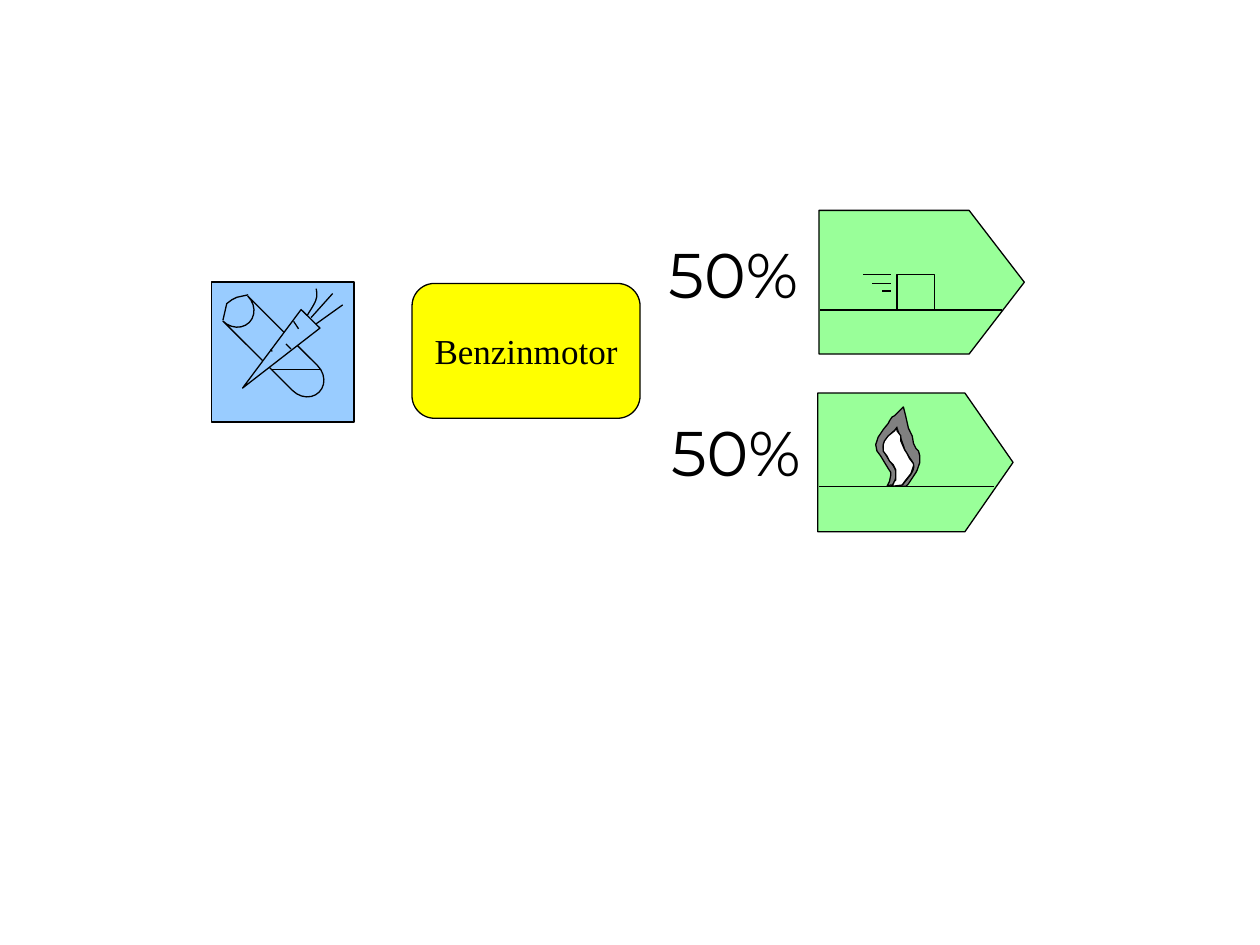
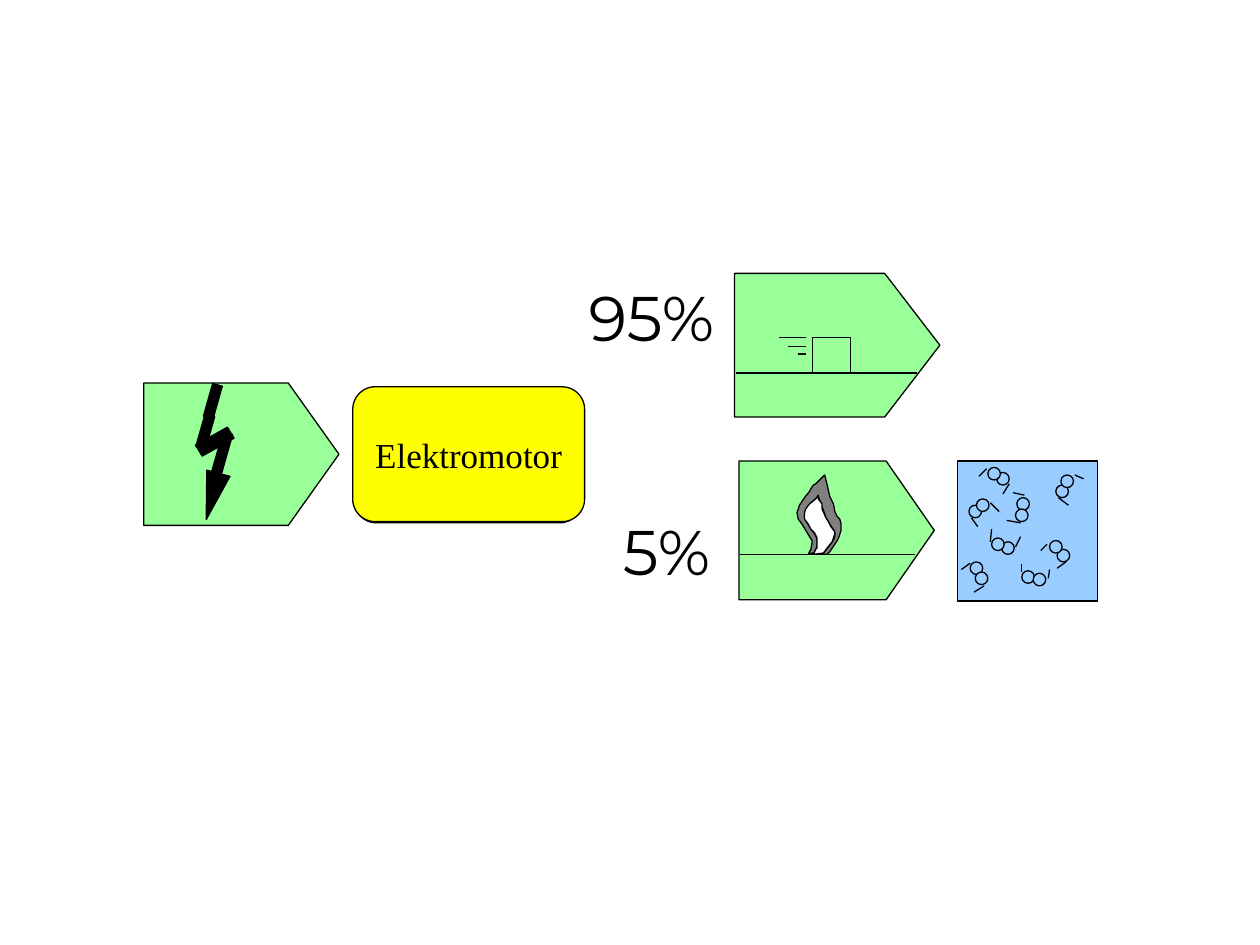
from dataclasses import dataclass
from typing import Optional, Union

from lxml.etree import SubElement
from pptx import Presentation
from pptx.dml.color import RGBColor as RGB
from pptx.enum.shapes import MSO_CONNECTOR as CONN, MSO_SHAPE as SHAPE
from pptx.enum.text import MSO_ANCHOR as ANCHOR, PP_ALIGN as ALIGN
from pptx.oxml.ns import qn
from pptx.util import Emu, Inches, Pt

# The slide is a grid of 1000 columns by 750 rows of square cells.
COLS, ROWS = 1000, 750
CELL = Inches(10) // COLS


@dataclass(frozen=True)
class Theme:
    ink: str = "000000"
    energy: str = "99FF99"
    matter: str = "99CCFF"
    engine: str = "FFFF00"
    smoke: str = "808080"
    glow: str = "FFFFFF"
    hairline: float = 0.75
    frame: float = 1
    label_font: str = "Times New Roman"
    label_size: int = 20
    share_font: str = "Montserrat"
    share_size: int = 36


T = Theme()


# Building blocks; positions are in cells from the symbol's top left corner
@dataclass(frozen=True)
class Block:
    kind: SHAPE
    x: float
    y: float
    w: float
    h: float
    fill: str
    rot: float = 0
    adj: Optional[float] = None
    line: float = T.hairline


@dataclass(frozen=True)
class Stroke:
    x1: float
    y1: float
    x2: float
    y2: float


@dataclass(frozen=True)
class Outline:
    points: tuple
    fill: Optional[str] = None
    closed: bool = False
    curved: bool = False


@dataclass(frozen=True)
class Share:
    text: str
    x: float
    y: float
    w: float = 110
    h: float = 84


Part = Union[Block, Stroke, Outline]


def cells(n: float) -> Emu:
    return Emu(round(n * CELL))


def smooth_points(points: tuple, steps: int = 8) -> list:
    """Sample a chain of cubic curves that share their end points."""
    result = [points[0]]
    for i in range(0, len(points) - 1, 3):
        a, b, c, d = points[i:i + 4]
        for k in range(1, steps + 1):
            t = k / steps
            u = 1 - t
            result.append(tuple(
                u**3 * a[n] + 3 * u * u * t * b[n] + 3 * u * t * t * c[n] + t**3 * d[n]
                for n in (0, 1)))
    return result


def paint(sp, fill: Optional[str], width: float) -> None:
    sp.shadow.inherit = False
    if fill:
        sp.fill.solid()
        sp.fill.fore_color.rgb = RGB.from_string(fill)
    else:
        sp.fill.background()
    sp.line.color.rgb = RGB.from_string(T.ink)
    sp.line.width = Pt(width)


def draw_block(shapes, b: Block, x: float = 0, y: float = 0):
    sp = shapes.add_shape(b.kind, cells(x + b.x), cells(y + b.y), cells(b.w), cells(b.h))
    sp.rotation = b.rot
    if b.adj is not None:
        sp.adjustments[0] = b.adj
    paint(sp, b.fill, b.line)
    return sp


def draw_stroke(shapes, s: Stroke, x: float, y: float) -> None:
    ln = shapes.add_connector(CONN.STRAIGHT, cells(x + s.x1), cells(y + s.y1),
                              cells(x + s.x2), cells(y + s.y2))
    ln.line.color.rgb = RGB.from_string(T.ink)
    ln.line.width = Pt(T.hairline)
    SubElement(ln.element.spPr, qn("a:effectLst"))


def draw_outline(shapes, o: Outline, x: float, y: float) -> None:
    points = smooth_points(o.points) if o.curved else o.points
    points = [(cells(x + px), cells(y + py)) for px, py in points]
    fb = shapes.build_freeform(*points[0])
    fb.add_line_segments(points[1:], close=o.closed)
    paint(fb.convert_to_shape(), o.fill, T.hairline)


DRAW = {Block: draw_block, Stroke: draw_stroke, Outline: draw_outline}


def draw_symbol(slide, parts: list[Part], x: float, y: float) -> None:
    group = slide.shapes.add_group_shape()
    for part in parts:
        DRAW[type(part)](group.shapes, part, x, y)


def add_text(sp, text: str, font: str, size: int):
    tf = sp.text_frame
    tf.word_wrap = False
    tf.margin_left = tf.margin_right = 0
    p = tf.paragraphs[0]
    p.alignment = ALIGN.CENTER
    r = p.add_run()
    r.text = text
    r.font.name, r.font.size = font, Pt(size)
    r.font.color.rgb = RGB.from_string(T.ink)
    return r


def draw_engine(slide, x: float, y: float, w: float, name: str = "") -> None:
    sp = draw_block(slide.shapes,
                    Block(SHAPE.ROUNDED_RECTANGLE, x, y, w, 107, T.engine, adj=0.167))
    if name:
        sp.text_frame.vertical_anchor = ANCHOR.MIDDLE
        add_text(sp, name, T.label_font, T.label_size)


def draw_share(slide, s: Share) -> None:
    tb = slide.shapes.add_textbox(cells(s.x), cells(s.y), cells(s.w), cells(s.h))
    r = add_text(tb, s.text, T.share_font, T.share_size)
    # Thin outline around the digits
    ln = SubElement(r.font._element, qn("a:ln"), w=str(Pt(T.hairline)))
    fill = SubElement(ln, qn("a:solidFill"))
    SubElement(fill, qn("a:srgbClr"), val=T.ink)
    r.font._element.insert(0, ln)


def plate(w: float, h: float, adj: float) -> Block:
    return Block(SHAPE.PENTAGON, 0, 0, w, h, T.energy, adj=adj)


def bar(x: float, y: float, h: float) -> Block:
    return Block(SHAPE.RECTANGLE, x, y, 8, h, T.ink, 15.8)


# Food: cucumber and carrot
FOOD = [
    Block(SHAPE.RECTANGLE, 0, 0, 113, 111, T.matter, line=T.frame),
    Block(SHAPE.FLOWCHART_STORED_DATA, 5, 40, 94, 28, T.matter, 224.9),
    Outline(((29, 10), (20, 12), (16, 14), (12, 17), (9, 30)), T.matter),
    Block(SHAPE.ISOSCELES_TRIANGLE, 41, 18, 21, 77, T.matter, 224.5),
    Outline(((76, 26), (79, 21), (82, 17), (83, 13), (84, 10), (83, 6), (83, 5)),
            T.matter, curved=True),
    Stroke(79, 28, 96, 9), Stroke(83, 33, 104, 18),
    Stroke(65, 31, 69, 37), Stroke(59, 49, 63, 53),
    Stroke(47, 53, 48, 55), Stroke(48, 69, 86, 69),
]

# Motion: a box sliding on the ground
MOTION = [
    plate(163, 114, 0.384),
    Stroke(1, 79, 145, 79),
    Block(SHAPE.RECTANGLE, 62, 51, 30, 28, T.energy),
    Stroke(57, 51, 35, 51), Stroke(57, 58, 42, 58), Stroke(50, 64, 57, 64),
]

# Heat: a flame on the ground
HEAT = [
    plate(155, 110, 0.347),
    Outline(((68, 11), (69, 15), (70, 19), (72, 28), (75, 34), (76, 40), (77, 42),
             (78, 44), (80, 46), (81, 50), (81, 55), (79, 61), (78, 63), (76, 66),
             (72, 72), (70, 74), (63, 74), (58, 73), (55, 74), (57, 70), (58, 65),
             (58, 63), (56, 60), (53, 55), (50, 50), (47, 46), (46, 41), (48, 35),
             (52, 29), (56, 24), (57, 22), (59, 19), (61, 18), (64, 15), (66, 13)),
            T.smoke, closed=True),
    Stroke(1, 74, 140, 74),
    Outline(((63, 28), (57, 33), (52, 38), (52, 43), (52, 49), (61, 57), (62, 62),
             (63, 67), (61, 70), (59, 74)), curved=True),
    Outline(((63, 28), (64, 31), (68, 41), (69, 45), (71, 49), (71, 48), (72, 50),
             (74, 53), (77, 56), (76, 60), (75, 64), (71, 68), (67, 73)), curved=True),
    Outline(((67, 73), (70, 69), (74, 64), (76, 58), (76, 56), (73, 52), (71, 48),
             (69, 45), (66, 38), (66, 34), (63, 30), (63, 27), (61, 30), (56, 34),
             (53, 38), (52, 41), (52, 46), (55, 50), (57, 54), (60, 57), (62, 61),
             (62, 63), (62, 66), (62, 69), (61, 70), (60, 72), (59, 74)),
            T.glow, closed=True),
]

# Electricity: a lightning bolt
ELECTRICITY = [
    plate(155, 113, 0.356),
    Block(SHAPE.ISOSCELES_TRIANGLE, 45, 71, 19, 38, T.ink, 194.8),
    bar(58, 39, 36),
    Block(SHAPE.PARALLELOGRAM, 51, 32, 11, 29, T.ink, 239.1, 0.07),
    bar(45, 25, 27), bar(51, 1, 27),
]

# Air: molecules of two atoms, each with two motion strokes
MOLECULES = [
    ((47, 29), (46, 38), (53, 27, 44, 25), (50, 49, 39, 47)),
    ((35, 64), (27, 61), (46, 68, 50, 60), (26, 64, 27, 54)),
    ((79, 70), (73, 63), (71, 66, 66, 71), (86, 80, 79, 85)),
    ((9, 35), (15, 30), (11, 45, 16, 52), (26, 33, 33, 40)),
    ((51, 87), (60, 89), (51, 88, 51, 82), (72, 93, 73, 86)),
    ((78, 19), (82, 11), (80, 29, 88, 35), (93, 11, 100, 14)),
    ((31, 9), (24, 5), (23, 6, 17, 12), (41, 18, 36, 26)),
    ((10, 80), (14, 88), (21, 99, 13, 104), (10, 81, 3, 86)),
]
AIR = [Block(SHAPE.RECTANGLE, 0, 0, 111, 111, T.matter, line=T.frame)]
for *atoms, trail_a, trail_b in MOLECULES:
    AIR += [Block(SHAPE.OVAL, x, y, 10, 10, T.matter) for x, y in atoms]
    AIR += [Stroke(*trail_a), Stroke(*trail_b)]


def petrol_slide(slide) -> None:
    draw_symbol(slide, FOOD, 168, 224)
    draw_symbol(slide, MOTION, 650, 167)
    draw_symbol(slide, HEAT, 649, 312)
    draw_engine(slide, 327, 225, 181, "Benzinmotor")
    draw_share(slide, Share("50%", 527, 182))
    draw_share(slide, Share("50%", 529, 323))


def electric_slide(slide) -> None:
    draw_engine(slide, 281, 308, 181)
    draw_engine(slide, 280, 307, 184, "Elektromotor")
    draw_symbol(slide, MOTION, 583, 217)
    draw_symbol(slide, ELECTRICITY, 114, 304)
    draw_symbol(slide, HEAT, 586.5, 366)
    draw_symbol(slide, AIR, 760, 366)
    draw_share(slide, Share("95%", 462, 216))
    draw_share(slide, Share("5%", 490, 402, 78, 80))


def main() -> None:
    prs = Presentation()
    prs.slide_width, prs.slide_height = cells(COLS), cells(ROWS)
    for build in (petrol_slide, electric_slide):
        build(prs.slides.add_slide(prs.slide_layouts[6]))
    prs.save("out.pptx")


if __name__ == "__main__":
    main()
